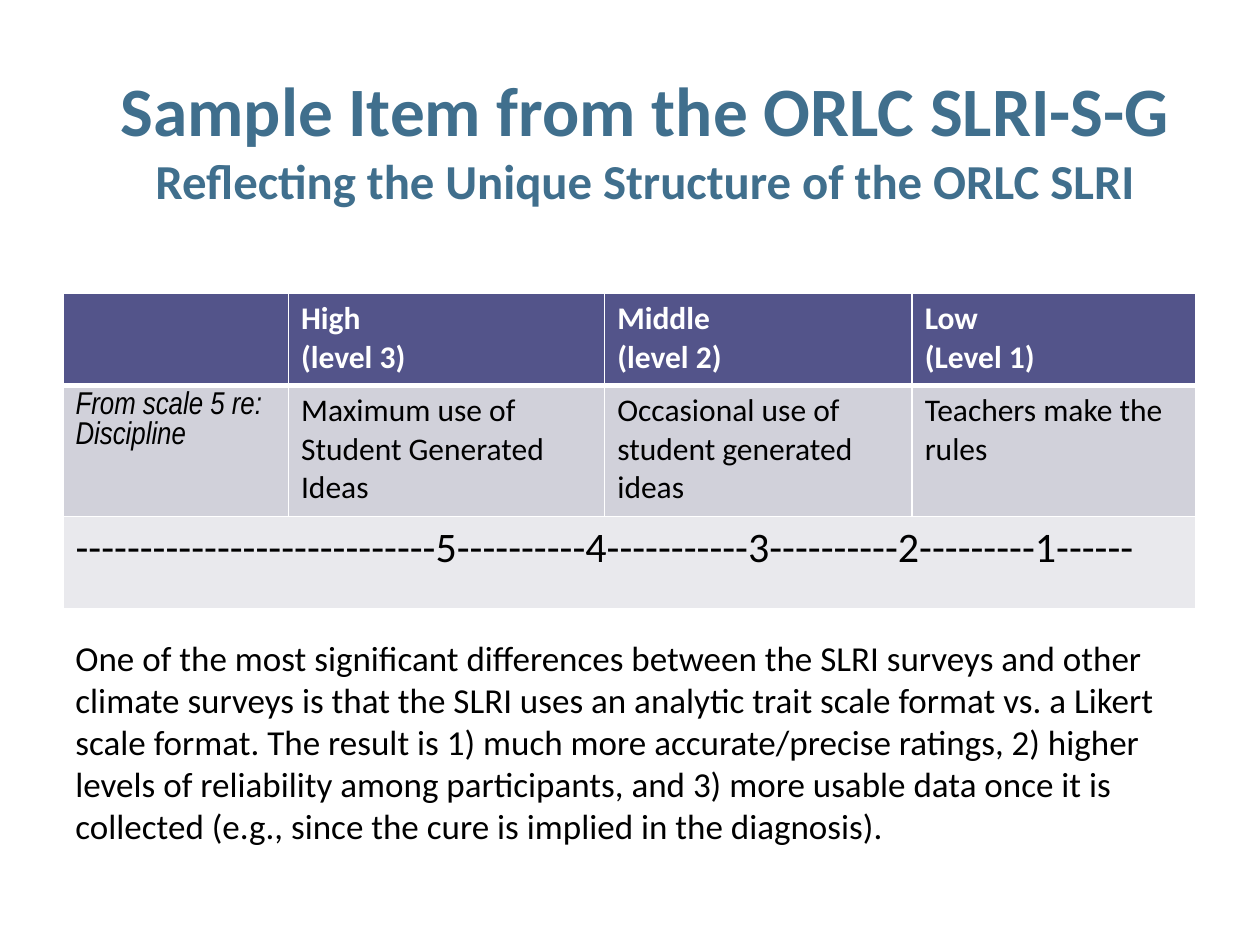
"""Build a slide showing a sample survey item and its rating scale."""
from lxml import etree
from pptx import Presentation
from pptx.dml.color import RGBColor
from pptx.enum import text
from pptx.oxml import ns
from pptx.util import Inches, Pt

COLORS = {
    "title": "406F8D", "header": "53548A", "item": "D1D1DA",
    "scale": "E9E9ED", "white": "FFFFFF", "black": "000000",
}
TITLE = [
    ("Sample Item from the ORLC SLRI-S-G", 39.6),
    ("Reflecting the Unique Structure of the ORLC SLRI", 27.9),
]
HEADERS = ["", "High\n(level 3)", "Middle\n(level 2)", "Low\n(Level 1)"]
ITEM = [
    "From scale 5 re: Discipline",
    "Maximum use of Student Generated Ideas",
    "Occasional use of student generated ideas",
    "Teachers make the rules",
]
SCALE = "----------------------------5----------4-----------3----------2---------1------"
EXPLANATION = (
    "One of the most significant differences between the SLRI surveys and other "
    "climate surveys is that the SLRI uses an analytic trait scale format vs. a "
    "Likert scale format. The result is 1) much more accurate/precise ratings, "
    "2) higher levels of reliability among participants, and 3) more usable data "
    "once it is collected (e.g., since the cure is implied in the diagnosis)."
)
COLUMN_WIDTHS = [1.79, 2.51, 2.44, 2.25]
ROW_HEIGHTS = [0.73, 1.04, 0.73]


def add_run(paragraph, words, size=18, color="black", bold=False, italic=False, font="Calibri"):
    run = paragraph.add_run()
    run.text = words
    run.font.name = font
    run.font.size = Pt(size)
    run.font.bold = bold
    run.font.italic = italic
    run.font.color.rgb = RGBColor.from_string(COLORS[color])


def add_text_box(slide, left, top, width, height):
    frame = slide.shapes.add_textbox(*map(Inches, (left, top, width, height))).text_frame
    frame.word_wrap = True
    return frame


def set_borders(cell, bottom):
    properties = cell._tc.get_or_add_tcPr()
    widths = {"lnL": 1, "lnR": 1, "lnT": 1, "lnB": bottom}
    for position, (side, width) in enumerate(widths.items()):
        line = etree.Element(ns.qn(f"a:{side}"), w=str(Pt(width)))
        fill = etree.SubElement(line, ns.qn("a:solidFill"))
        etree.SubElement(fill, ns.qn("a:srgbClr"), val=COLORS["white"])
        properties.insert(position, line)


def fill_cell(cell, words, fill, bottom=1, **style):
    cell.fill.solid()
    cell.fill.fore_color.rgb = RGBColor.from_string(COLORS[fill])
    set_borders(cell, bottom)
    for index, line in enumerate(words.split("\n") if words else []):
        frame = cell.text_frame
        paragraph = frame.add_paragraph() if index else frame.paragraphs[0]
        add_run(paragraph, line, **style)


def add_rating_table(slide):
    frame = slide.shapes.add_table(
        len(ROW_HEIGHTS), len(COLUMN_WIDTHS), Inches(0.5), Inches(2.33),
        Inches(sum(COLUMN_WIDTHS)), Inches(sum(ROW_HEIGHTS)))
    table = frame.table
    for column, width in zip(table.columns, COLUMN_WIDTHS):
        column.width = Inches(width)
    for row, height in zip(table.rows, ROW_HEIGHTS):
        row.height = Inches(height)
    for index, (header, level) in enumerate(zip(HEADERS, ITEM)):
        style = {} if index else {"italic": True, "font": "Arial Narrow"}
        fill_cell(table.cell(0, index), header, "header", bottom=3, color="white", bold=True)
        fill_cell(table.cell(1, index), level, "item", **style)
    table.cell(2, 0).merge(table.cell(2, len(COLUMN_WIDTHS) - 1))
    fill_cell(table.cell(2, 0), SCALE, "scale", size=24)


def main():
    presentation = Presentation()
    presentation.slide_width, presentation.slide_height = Inches(10), Inches(7.5)
    slide = presentation.slides.add_slide(presentation.slide_layouts[6])
    add_rating_table(slide)

    title = add_text_box(slide, 0.62, 0.47, 9, 1.25)
    title.vertical_anchor = text.MSO_ANCHOR.MIDDLE
    heading = title.paragraphs[0]
    heading.alignment = text.PP_ALIGN.CENTER
    for index, (words, size) in enumerate(TITLE):
        if index:
            heading.add_line_break()
        add_run(heading, words, size=size, color="title", bold=True)

    explanation = add_text_box(slide, 0.5, 5, 8.92, 1.78)
    explanation.auto_size = text.MSO_AUTO_SIZE.SHAPE_TO_FIT_TEXT
    add_run(explanation.paragraphs[0], EXPLANATION, size=20)
    presentation.save("out.pptx")


if __name__ == "__main__":
    main()
